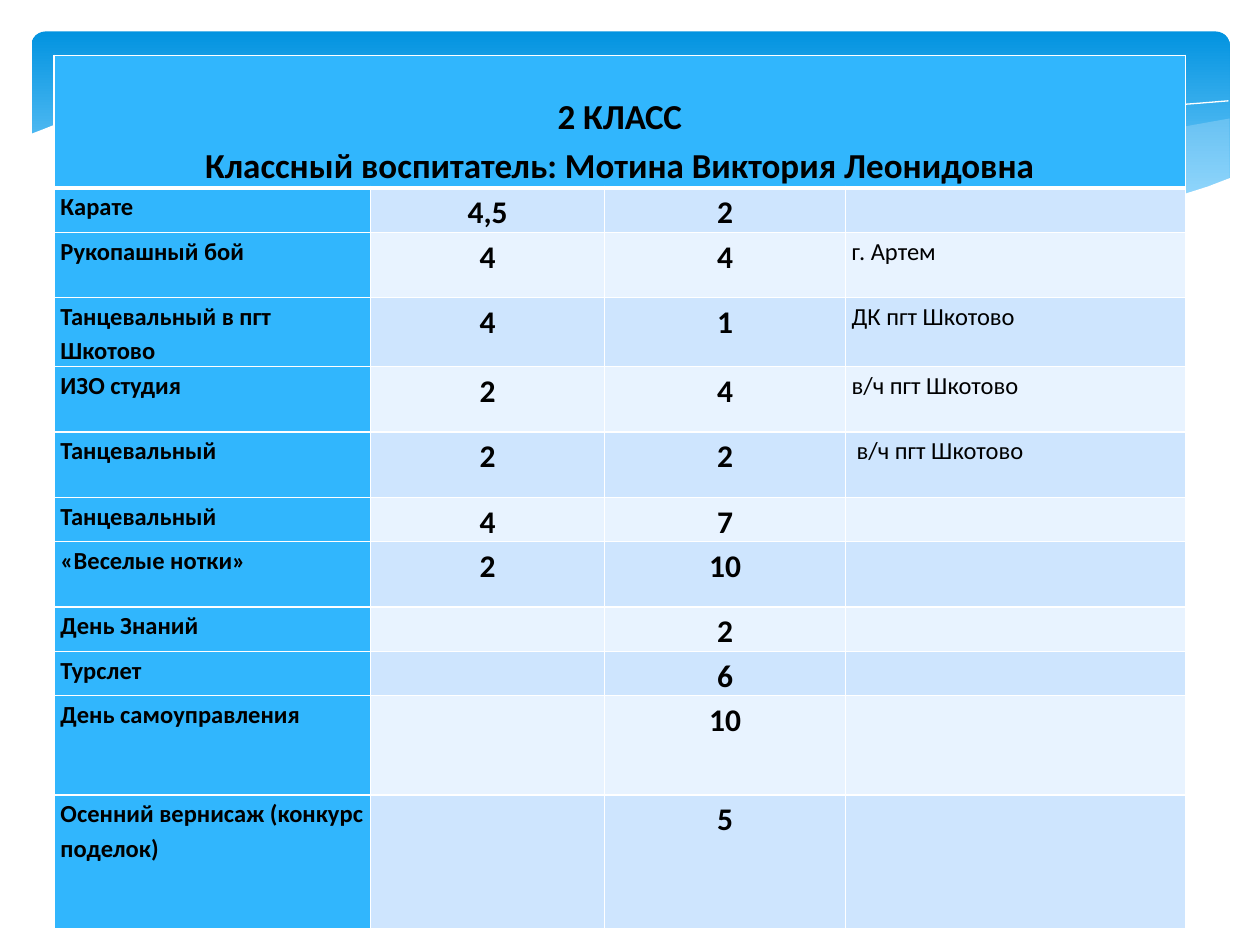
from typing import NamedTuple, Optional

from lxml import etree
from pptx import Presentation
from pptx.dml.color import RGBColor
from pptx.enum.shapes import MSO_SHAPE
from pptx.enum.text import PP_ALIGN
from pptx.oxml.ns import qn
from pptx.util import Inches, Pt

ROUND_RECT = MSO_SHAPE.ROUNDED_RECTANGLE
LEFT, CENTER = PP_ALIGN.LEFT, PP_ALIGN.CENTER

BLACK = RGBColor(0x00, 0x00, 0x00)
WHITE = RGBColor(0xFF, 0xFF, 0xFF)
BANNER_TOP = RGBColor(0x02, 0x93, 0xE0)
BANNER_BOTTOM = RGBColor(0x83, 0xD3, 0xFE)
PALE_BLUE = RGBColor(0xC6, 0xE7, 0xFC)
HEADER_BLUE = RGBColor(0x31, 0xB6, 0xFD)
BANDS = (RGBColor(0xCE, 0xE5, 0xFE), RGBColor(0xE8, 0xF3, 0xFF))

FONT = "Calibri"
HEADING = ("2 КЛАСС", "Классный воспитатель: Мотина Виктория Леонидовна")
HEADING_HEIGHT = 1.0
HEADING_GAP = 0.27
COLUMNS = (2.51, 1.86, 1.91, 2.7)
SHORT, NORMAL = 0.29, 0.52


class Wave(NamedTuple):
    points: list
    fill: Optional[RGBColor] = None
    opacity: int = 100


class Activity(NamedTuple):
    height: float
    name: str
    hours: str
    pupils: str
    place: str = ""
    place_indent: float = 0.05


WAVES = [
    Wave([(9.76, 0.94), (9.48, 0.99), (9.21, 1.04), (8.91, 1.1), (8.61, 1.18),
          (8.05, 1.31), (7.53, 1.43), (7.06, 1.52), (6.61, 1.6), (6.91, 1.64),
          (7.32, 1.68), (7.69, 1.71), (8.03, 1.72), (8.35, 1.72), (8.63, 1.7),
          (8.89, 1.66), (9.13, 1.62), (9.35, 1.56), (9.63, 1.47), (9.76, 1.41)],
         PALE_BLUE, 29),
    Wave([(8.93, 1.67), (8.66, 1.64), (8.07, 1.54), (7.41, 1.42), (6.68, 1.26),
          (6.29, 1.16), (5.84, 1.06), (5.41, 0.97), (5.02, 0.9), (4.65, 0.86),
          (4.2, 0.82), (3.8, 0.8), (3.44, 0.8), (3.13, 0.82), (2.86, 0.86),
          (3.23, 0.9), (3.62, 0.97), (4.04, 1.06), (4.49, 1.16), (5.3, 1.35),
          (5.84, 1.46), (6.34, 1.56), (6.8, 1.63), (7.22, 1.68), (7.61, 1.71),
          (7.96, 1.73), (8.28, 1.73), (8.57, 1.71), (8.84, 1.68)],
         PALE_BLUE, 40),
    Wave([(3.09, 0.9), (3.28, 0.86), (3.53, 0.84), (3.87, 0.82), (4.16, 0.81),
          (4.5, 0.82), (4.89, 0.84), (5.33, 0.88), (5.82, 0.94), (6.36, 1.03),
          (6.95, 1.14), (7.6, 1.28), (8.31, 1.45), (9.07, 1.66)]),
    Wave([(6.13, 1.51), (6.53, 1.41), (6.95, 1.3), (7.48, 1.17), (8.06, 1.04),
          (8.66, 0.93), (8.95, 0.88), (9.24, 0.84), (9.51, 0.82), (9.75, 0.8)]),
    Wave([(9.77, 1.41), (9.59, 1.48), (9.4, 1.54), (9.2, 1.59), (8.99, 1.64),
          (8.75, 1.67), (8.5, 1.7), (8.23, 1.71), (7.93, 1.71), (7.61, 1.7),
          (7.26, 1.67), (6.88, 1.62), (6.48, 1.56), (6.03, 1.49), (5.55, 1.39),
          (5.03, 1.28), (4.47, 1.14), (3.91, 1.02), (3.4, 0.92), (2.92, 0.85),
          (2.5, 0.81), (2.11, 0.78), (1.77, 0.78), (1.46, 0.79), (1.19, 0.82),
          (0.95, 0.85), (0.76, 0.89), (0.59, 0.93), (0.46, 0.98), (0.36, 1.02),
          (0.23, 1.07), (0.23, 2.24), (9.77, 2.24)], WHITE),
]

ACTIVITIES = [
    Activity(SHORT, "Карате", "4,5", "2"),
    Activity(NORMAL, "Рукопашный бой", "4", "4", "г. Артем"),
    Activity(NORMAL, "Танцевальный в пгт Шкотово", "4", "1", "ДК пгт Шкотово"),
    Activity(NORMAL, "ИЗО студия", "2", "4", "в/ч пгт Шкотово"),
    Activity(NORMAL, "Танцевальный", "2", "2", "в/ч пгт Шкотово", 0.09),
    Activity(SHORT, "Танцевальный", "4", "7"),
    Activity(NORMAL, "«Веселые нотки»", "2", "10"),
    Activity(SHORT, "День Знаний", "", "2"),
    Activity(SHORT, "Турслет", "", "6"),
    Activity(0.79, "День самоуправления", "", "10"),
    Activity(1.06, "Осенний вернисаж (конкурс поделок)", "", "5"),
]


def add_banner(slide) -> None:
    s = slide.shapes.add_shape(ROUND_RECT, Inches(0.25), Inches(0.25),
                               Inches(9.51), Inches(1.56))
    s.adjustments[0] = 0.071
    s.shadow.inherit = False
    s.line.fill.background()
    s.fill.gradient()
    s.fill.gradient_angle = 270
    for stop, color, position in zip(s.fill.gradient_stops,
                                     (BANNER_TOP, BANNER_BOTTOM), (0, 0.9)):
        stop.color.rgb = color
        stop.position = position


def add_wave(slide, wave: Wave) -> None:
    """Draw a filled area, or a white hairline when the wave has no fill."""
    points = [(Inches(x), Inches(y)) for x, y in wave.points]
    builder = slide.shapes.build_freeform(*points[0])
    builder.add_line_segments(points[1:], close=wave.fill is not None)
    s = builder.convert_to_shape()
    s.shadow.inherit = False
    if wave.fill is None:
        s.fill.background()
        s.line.color.rgb = WHITE
        s.line.width = Pt(0)
        return
    s.line.fill.background()
    s.fill.solid()
    s.fill.fore_color.rgb = wave.fill
    if wave.opacity < 100:
        color = s.fill._xPr.find(f".//{qn('a:srgbClr')}")
        etree.SubElement(color, qn("a:alpha"), val=str(wave.opacity * 1000))


def format_cell(cell, fill: RGBColor, bottom: int = 1, indent: float = 0.05) -> None:
    """Set margins, fill and white borders; bottom is a width in points."""
    cell.margin_left, cell.margin_right = Inches(indent), Inches(0.05)
    cell.margin_top = cell.margin_bottom = 0
    cell.fill.solid()
    cell.fill.fore_color.rgb = fill
    tc_pr = cell._tc.get_or_add_tcPr()
    for i, (side, width) in enumerate(zip("LRTB", (1, 1, 1, bottom))):
        ln = etree.Element(qn(f"a:ln{side}"), w=str(Pt(width)))
        solid = etree.SubElement(ln, qn("a:solidFill"))
        etree.SubElement(solid, qn("a:srgbClr"), val=str(WHITE))
        tc_pr.insert(i, ln)


def write_cell(cell, lines: tuple, size: int, bold: bool, align) -> None:
    tf = cell.text_frame
    for i, line in enumerate(lines):
        p = tf.add_paragraph() if i else tf.paragraphs[0]
        p.alignment = align
        p.line_spacing = 1.15
        p.font.size = Pt(size)
        if line:
            r = p.add_run()
            r.text = line
            r.font.name = FONT
            r.font.size = Pt(size)
            r.font.bold = bold
            r.font.color.rgb = BLACK


def add_activity_table(slide) -> None:
    heights = [HEADING_HEIGHT] + [a.height for a in ACTIVITIES]
    table = slide.shapes.add_table(
        len(heights), len(COLUMNS), Inches(0.43), Inches(0.44),
        Inches(sum(COLUMNS)), Inches(sum(heights))).table
    table.first_row = table.horz_banding = False
    for column, width in zip(table.columns, COLUMNS):
        column.width = Inches(width)
    for row, height in zip(table.rows, heights):
        row.height = Inches(height)

    for cell in table.rows[0].cells:
        format_cell(cell, HEADER_BLUE, bottom=3)
    heading = table.cell(0, 0)
    heading.merge(table.cell(0, len(COLUMNS) - 1))
    heading.margin_top = Inches(HEADING_GAP)
    write_cell(heading, HEADING, 20, True, CENTER)

    for i, a in enumerate(ACTIVITIES):
        band = BANDS[i % 2]
        name, hours, pupils, place = table.rows[i + 1].cells
        format_cell(name, HEADER_BLUE)
        write_cell(name, (a.name,), 14, True, LEFT)
        for cell, number in ((hours, a.hours), (pupils, a.pupils)):
            format_cell(cell, band)
            write_cell(cell, (number,), 18, True, CENTER)
        format_cell(place, band, indent=a.place_indent)
        write_cell(place, (a.place,), 14, False, LEFT)


def main() -> None:
    prs = Presentation()
    prs.slide_width, prs.slide_height = Inches(10), Inches(7.5)
    slide = prs.slides.add_slide(prs.slide_layouts[6])
    add_banner(slide)
    for wave in WAVES:
        add_wave(slide, wave)
    add_activity_table(slide)
    prs.save("out.pptx")


if __name__ == "__main__":
    main()
